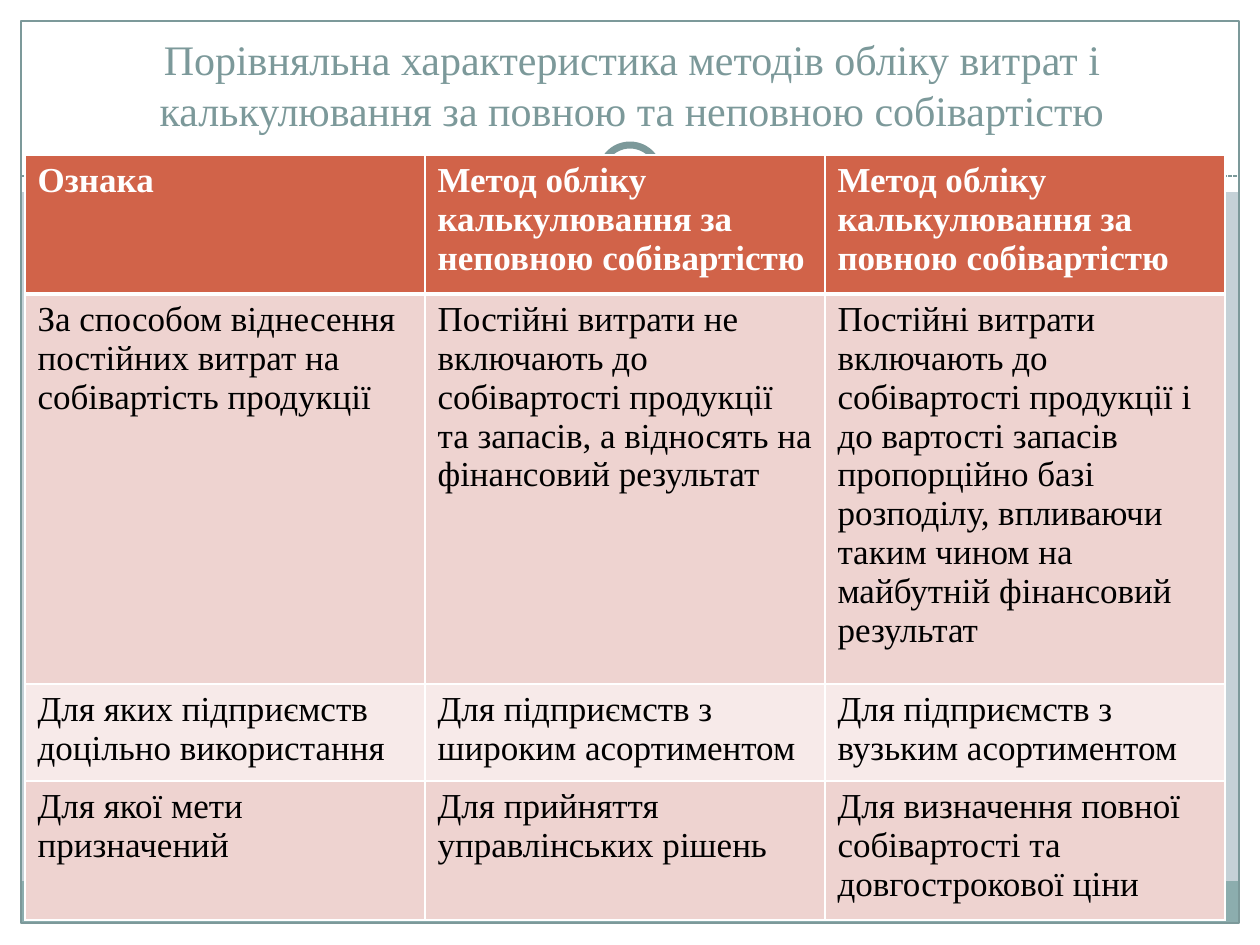
from lxml import etree
from pptx import Presentation
from pptx import util as u
from pptx.dml.color import RGBColor
from pptx.enum import dml, shapes, text
from pptx.oxml import ns

PX = 914400 / 126
FONT = "Times New Roman"
COLORS = {
    "white": "FFFFFF",
    "black": "000000",
    "background": "C5D1D7",
    "teal": "7C999A",
    "footer": "8CADAE",
    "header": "D16349",
    "band_dark": "EED3D0",
    "band_light": "F7EAE9",
}
TITLE = ("Порівняльна характеристика методів обліку витрат і "
         "калькулювання за повною та неповною собівартістю")
ROWS = [
    ("Ознака",
     "Метод обліку калькулювання за неповною собівартістю",
     "Метод обліку калькулювання за повною собівартістю"),
    ("За способом віднесення постійних витрат на собівартість продукції",
     "Постійні витрати не включають до собівартості продукції та запасів, "
     "а відносять на фінансовий результат",
     "Постійні витрати включають до собівартості продукції і до вартості "
     "запасів пропорційно базі розподілу, впливаючи таким чином на "
     "майбутній фінансовий результат"),
    ("Для яких підприємств доцільно використання",
     "Для підприємств з широким асортиментом",
     "Для підприємств з вузьким асортиментом"),
    ("Для якої мети призначений",
     "Для прийняття управлінських рішень",
     "Для визначення повної собівартості та довгострокової ціни"),
]
ROW_HEIGHTS = (139, 390, 97, 139)
COLUMN_WIDTH = 400


def px(length):
    """Turn pixels into EMU."""
    return u.Emu(round(length * PX))


def rgb(name):
    """Look up a named colour."""
    return RGBColor.from_string(COLORS[name])


def write_text(frame, content, size=20, color="black", bold=False, align=text.PP_ALIGN.LEFT):
    """Put one formatted paragraph into a text frame."""
    paragraph = frame.paragraphs[0]
    paragraph.alignment = align
    run = paragraph.add_run()
    run.text = content
    run.font.name = FONT
    run.font.size = u.Pt(size)
    run.font.bold = bold
    run.font.color.rgb = rgb(color)


def add_panel(slide, box, kind=shapes.MSO_SHAPE.RECTANGLE, fill=None, line=None, weight=0.75):
    """Add a decorative shape with an optional fill and outline."""
    shape = slide.shapes.add_shape(kind, *map(px, box))
    shape.shadow.inherit = False
    if fill:
        shape.fill.solid()
        shape.fill.fore_color.rgb = rgb(fill)
    else:
        shape.fill.background()
    if line:
        shape.line.color.rgb = rgb(line)
        shape.line.width = u.Pt(weight)
    else:
        shape.line.fill.background()


def add_divider(slide, left, right, top):
    """Add the dashed line under the title."""
    line = slide.shapes.add_connector(
        shapes.MSO_CONNECTOR.STRAIGHT, px(left), px(top), px(right), px(top))
    line.line.color.rgb = rgb("teal")
    line.line.width = u.Pt(0.75)
    line.line.dash_style = dml.MSO_LINE.SQUARE_DOT
    etree.SubElement(line.element.spPr, ns.qn("a:effectLst"))


def add_backdrop(slide):
    """Draw the margins, footer band, frame and ring."""
    slide.background.fill.solid()
    slide.background.fill.fore_color.rgb = rgb("background")
    margins = ((0, 924, 1260, 21), (0, 0, 1260, 192), (0, 0, 21, 945), (1239, 0, 21, 945))
    for box in margins:
        add_panel(slide, box, fill="white")
    add_panel(slide, (21, 881, 1218, 43), fill="footer")
    add_panel(slide, (21, 21, 1218, 902), line="teal")
    add_divider(slide, 21, 1239, 176)
    oval = shapes.MSO_SHAPE.OVAL
    add_panel(slide, (588, 132, 84, 84), oval, fill="white")
    add_panel(slide, (601, 145, 58, 58), oval, fill="white", line="teal", weight=4)


def place_title(slide):
    """Move the title placeholder above the backdrop and fill it."""
    title = slide.shapes.title
    title.element.getparent().append(title.element)
    title.left, title.top, title.width, title.height = map(px, (44, 37, 1176, 104))
    frame = title.text_frame
    frame.word_wrap = True
    frame.auto_size = text.MSO_AUTO_SIZE.NONE
    frame.vertical_anchor = text.MSO_ANCHOR.BOTTOM
    write_text(frame, TITLE, size=24, color="teal", align=text.PP_ALIGN.CENTER)


def set_borders(cell, bottom=1, top=1):
    """Give a cell white borders, placed before its fill."""
    properties = cell._tc.get_or_add_tcPr()
    for index, (side, weight) in enumerate((("L", 1), ("R", 1), ("T", top), ("B", bottom))):
        line = etree.Element(ns.qn(f"a:ln{side}"), w=str(u.Pt(weight)))
        fill = etree.SubElement(line, ns.qn("a:solidFill"))
        etree.SubElement(fill, ns.qn("a:srgbClr"), val=COLORS["white"])
        properties.insert(index, line)


def add_comparison_table(slide):
    """Add the banded table comparing the two methods."""
    columns = len(ROWS[0])
    table = slide.shapes.add_table(
        len(ROWS), columns, px(25), px(155),
        px(COLUMN_WIDTH * columns), px(sum(ROW_HEIGHTS))).table
    for column in table.columns:
        column.width = px(COLUMN_WIDTH)
    for index, (contents, height) in enumerate(zip(ROWS, ROW_HEIGHTS)):
        table.rows[index].height = px(height)
        header = index == 0
        band = "header" if header else ("band_light", "band_dark")[index % 2]
        for position, content in enumerate(contents):
            cell = table.cell(index, position)
            cell.fill.solid()
            cell.fill.fore_color.rgb = rgb(band)
            set_borders(cell, bottom=3 if header else 1, top=3 if index == 1 else 1)
            write_text(cell.text_frame, content, bold=header,
                       color="white" if header else "black")


def main():
    """Build and save the slide."""
    presentation = Presentation()
    presentation.slide_width, presentation.slide_height = px(1260), px(945)
    slide = presentation.slides.add_slide(presentation.slide_layouts[5])
    add_backdrop(slide)
    place_title(slide)
    add_comparison_table(slide)
    presentation.save("out.pptx")


if __name__ == "__main__":
    main()
